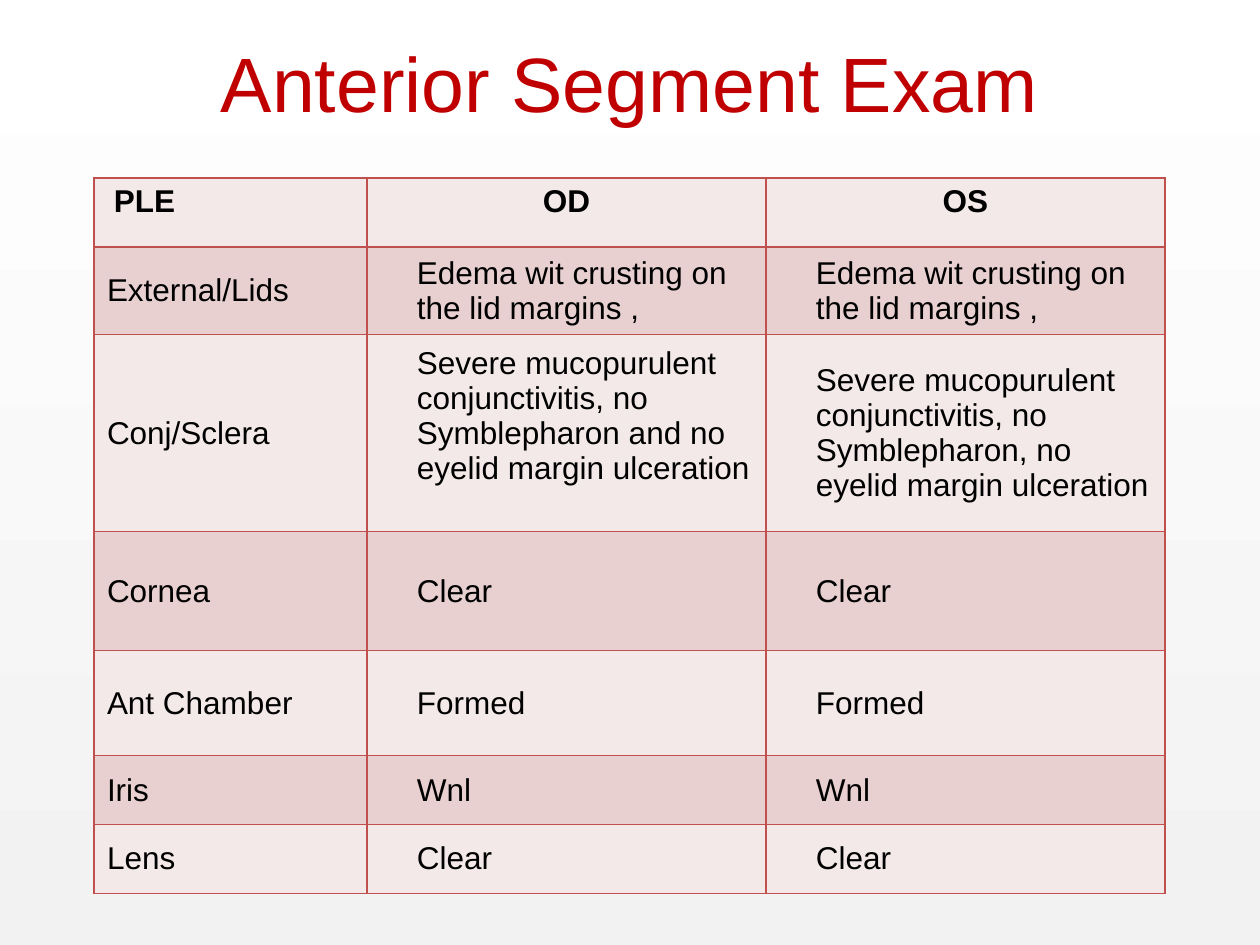
from dataclasses import dataclass

from lxml import etree
from pptx import Presentation
from pptx.dml.color import RGBColor
from pptx.enum.shapes import MSO_SHAPE
from pptx.enum.text import MSO_ANCHOR, PP_ALIGN
from pptx.oxml.ns import qn
from pptx.util import Emu, Pt

RECTANGLE = MSO_SHAPE.RECTANGLE
TOP, MIDDLE = MSO_ANCHOR.TOP, MSO_ANCHOR.MIDDLE
LEFT, CENTER = PP_ALIGN.LEFT, PP_ALIGN.CENTER
EMU_PER_PX = 914400 / 126
PAGE_WIDTH, PAGE_HEIGHT = 1260, 945


@dataclass(frozen=True)
class Theme:
    font: str = "Arial"
    title_size: int = 44
    cell_size: int = 18
    border_width: int = 1
    title: str = "C00000"
    text: str = "000000"
    border: str = "C0504D"
    bands: tuple[str, str] = ("F4E9E9", "E8D0D0")
    page_bottom: str = "F2F2F2"
    page_top: str = "FFFFFF"


@dataclass(frozen=True)
class Entry:
    text: str
    left: int = 50
    bottom: int = 6
    anchor: MSO_ANCHOR = MIDDLE
    align: PP_ALIGN = LEFT
    bold: bool = False


@dataclass(frozen=True)
class ExamRow:
    height: int
    entries: tuple[Entry, Entry, Entry]


THEME = Theme()
COLUMN_WIDTHS = (273, 399, 399)


def px(length: int) -> Emu:
    return Emu(round(length * EMU_PER_PX))


def heading(text: str, left: int = 13, align: PP_ALIGN = CENTER) -> Entry:
    return Entry(text, left, anchor=TOP, align=align, bold=True)


def finding(height: int, part: str, right_eye: str, left_eye: str, bottom: int = 6) -> ExamRow:
    return ExamRow(height, (Entry(part, 13), Entry(right_eye, bottom=bottom), Entry(left_eye)))


LIDS = "Edema wit crusting on the lid margins ,"
ROWS = (
    ExamRow(69, (heading("PLE", 20, LEFT), heading("OD"), heading("OS"))),
    finding(83, "External/Lids", LIDS, LIDS),
    finding(
        189,
        "Conj/Sclera",
        "Severe mucopurulent conjunctivitis, no Symblepharon and no eyelid margin ulceration",
        "Severe mucopurulent conjunctivitis, no Symblepharon, no eyelid margin ulceration",
        bottom=40,
    ),
    finding(119, "Cornea", "Clear", "Clear"),
    finding(105, "Ant Chamber", "Formed", "Formed"),
    finding(69, "Iris", "Wnl", "Wnl"),
    finding(69, "Lens", "Clear", "Clear"),
)


def write(frame, text: str, size: int, color: str, align: PP_ALIGN, bold: bool = False) -> None:
    frame.word_wrap = True
    paragraph = frame.paragraphs[0]
    paragraph.text = text
    paragraph.alignment = align
    paragraph.font.name = THEME.font
    paragraph.font.size = Pt(size)
    paragraph.font.bold = bold
    paragraph.font.color.rgb = RGBColor.from_string(color)


def draw_background(page) -> None:
    backdrop = page.shapes.add_shape(RECTANGLE, 0, 0, px(PAGE_WIDTH), px(PAGE_HEIGHT))
    backdrop.shadow.inherit = False
    backdrop.line.fill.background()
    backdrop.fill.gradient()
    backdrop.fill.gradient_angle = 90
    for stop, color in zip(backdrop.fill.gradient_stops, (THEME.page_bottom, THEME.page_top)):
        stop.color.rgb = RGBColor.from_string(color)


def draw_title(page, text: str) -> None:
    box = page.shapes.add_textbox(px(63), px(3), px(1134), px(157))
    box.text_frame.vertical_anchor = MIDDLE
    write(box.text_frame, text, THEME.title_size, THEME.title, CENTER)


def add_borders(cell) -> None:
    properties = cell._tc.get_or_add_tcPr()
    for position, side in enumerate(("lnL", "lnR", "lnT", "lnB")):
        line = etree.Element(qn(f"a:{side}"), w=str(Pt(THEME.border_width)))
        fill = etree.SubElement(line, qn("a:solidFill"))
        etree.SubElement(fill, qn("a:srgbClr"), val=THEME.border)
        properties.insert(position, line)


def draw_cell(cell, entry: Entry, band: str) -> None:
    cell.margin_left, cell.margin_right = px(entry.left), px(13)
    cell.margin_top, cell.margin_bottom = px(6), px(entry.bottom)
    cell.vertical_anchor = entry.anchor
    cell.fill.solid()
    cell.fill.fore_color.rgb = RGBColor.from_string(band)
    write(cell.text_frame, entry.text, THEME.cell_size, THEME.text, entry.align, entry.bold)
    add_borders(cell)


def draw_table(page, rows: tuple[ExamRow, ...]) -> None:
    width, height = sum(COLUMN_WIDTHS), sum(row.height for row in rows)
    table = page.shapes.add_table(
        len(rows), len(COLUMN_WIDTHS), px(94), px(178), px(width), px(height)
    ).table
    for column, column_width in zip(table.columns, COLUMN_WIDTHS):
        column.width = px(column_width)
    for row_index, row in enumerate(rows):
        table.rows[row_index].height = px(row.height)
        for column_index, entry in enumerate(row.entries):
            draw_cell(table.cell(row_index, column_index), entry, THEME.bands[row_index % 2])


def main() -> None:
    deck = Presentation()
    deck.slide_width, deck.slide_height = px(PAGE_WIDTH), px(PAGE_HEIGHT)
    page = deck.slides.add_slide(deck.slide_layouts[6])
    draw_background(page)
    draw_title(page, "Anterior Segment Exam")
    draw_table(page, ROWS)
    deck.save("out.pptx")


if __name__ == "__main__":
    main()
